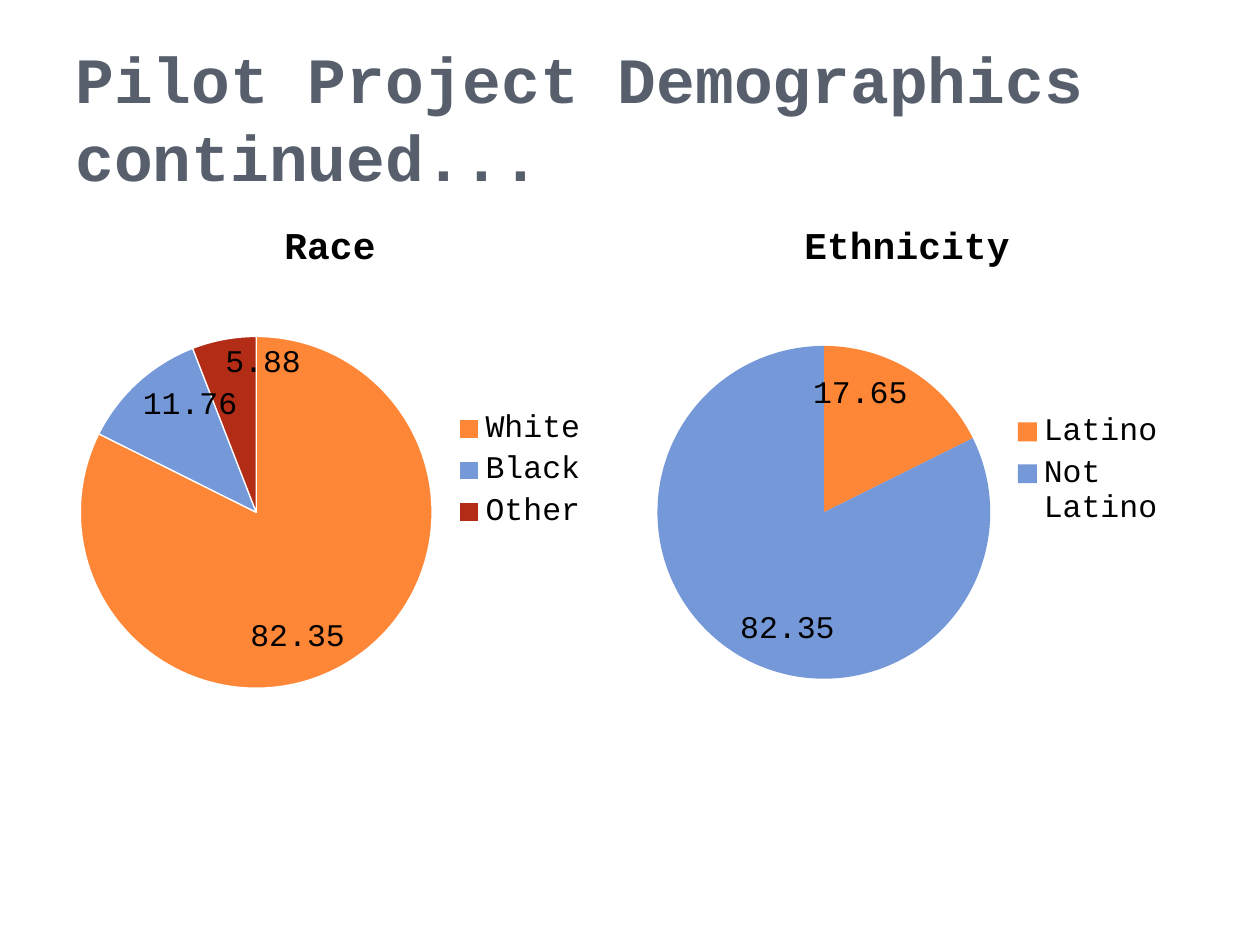
from dataclasses import dataclass

from pptx import Presentation
from pptx.chart.data import CategoryChartData
from pptx.dml.color import RGBColor
from pptx.enum.chart import XL_CHART_TYPE, XL_LABEL_POSITION as LabelPos, XL_LEGEND_POSITION as LegendPos
from pptx.enum.text import MSO_ANCHOR
from pptx.util import Pt


@dataclass(frozen=True)
class Theme:
    """Colours, font and type sizes of the slide."""
    font: str = "Courier New"
    heading: RGBColor = RGBColor(0x57, 0x5F, 0x6D)
    text: RGBColor = RGBColor(0, 0, 0)
    border: RGBColor = RGBColor(0xFF, 0xFF, 0xFF)
    slices: tuple = (
        RGBColor(0xFE, 0x86, 0x37),
        RGBColor(0x75, 0x98, 0xD9),
        RGBColor(0xB3, 0x2C, 0x16),
    )
    heading_size: float = 36.9
    chart_title_size: float = 21.6
    chart_size: float = 18


THEME = Theme()


def style_font(font, size, color, bold=False):
    """Apply the theme font with the given size, colour and weight."""
    font.name = THEME.font
    font.size = Pt(size)
    font.bold = bold
    font.color.rgb = color


def add_heading(slide, left, top, width, height, wording):
    """Place the slide heading in the given box."""
    frame = slide.shapes.add_textbox(Pt(left), Pt(top), Pt(width), Pt(height)).text_frame
    frame.word_wrap = True
    frame.vertical_anchor = MSO_ANCHOR.MIDDLE
    frame.text = wording
    style_font(frame.paragraphs[0].runs[0].font, THEME.heading_size, THEME.heading, True)


def add_pie(slide, left, top, width, height, topic, shares, bordered):
    """Place a titled pie chart with value labels and a legend on the right."""
    data = CategoryChartData(number_format="General")
    data.categories = list(shares)
    data.add_series(topic, list(shares.values()))
    chart = slide.shapes.add_chart(
        XL_CHART_TYPE.PIE, Pt(left), Pt(top), Pt(width), Pt(height), data
    ).chart
    style_font(chart.font, THEME.chart_size, THEME.text)

    chart.has_title = True
    title = chart.chart_title
    title.include_in_layout = False
    title.text_frame.text = topic
    style_font(title.text_frame.paragraphs[0].runs[0].font,
               THEME.chart_title_size, THEME.text, True)

    chart.has_legend = True
    chart.legend.position = LegendPos.RIGHT
    chart.legend.include_in_layout = False
    style_font(chart.legend.font, THEME.chart_size, THEME.text)

    plot = chart.plots[0]
    plot.vary_by_categories = True
    plot.has_data_labels = True
    labels = plot.data_labels
    labels.show_value = True
    labels.show_percentage = False
    labels.position = LabelPos.INSIDE_END
    style_font(labels.font, THEME.chart_size, THEME.text)

    for index, color in zip(range(len(shares)), THEME.slices):
        piece = plot.series[0].points[index].format
        piece.fill.solid()
        piece.fill.fore_color.rgb = color
        if bordered:
            piece.line.color.rgb = THEME.border
            piece.line.width = Pt(0.75)
        else:
            piece.line.fill.background()


def add_demographics(slide, left, top, width, height, gap, charts):
    """Set the pie charts side by side in the given box."""
    chart_width = (width - gap * (len(charts) - 1)) / len(charts)
    for column, (topic, shares, bordered) in enumerate(charts):
        add_pie(slide, left + column * (chart_width + gap), top,
                chart_width, height, topic, shares, bordered)


def main():
    """Build the demographics slide and save it."""
    deck = Presentation()
    deck.slide_width, deck.slide_height = Pt(720), Pt(540)
    slide = deck.slides.add_slide(deck.slide_layouts[6])
    add_heading(slide, 36, 21.6, 648, 90, "Pilot Project Demographics continued...")
    charts = [
        ("Race ", {"White ": 82.35, "Black ": 11.76, "Other ": 5.88}, True),
        ("Ethnicity ", {"Latino ": 17.65, "Not Latino ": 82.35}, False),
    ]
    add_demographics(slide, 36, 113.76, 648, 310.32, 11.52, charts)
    deck.save("out.pptx")


if __name__ == "__main__":
    main()
